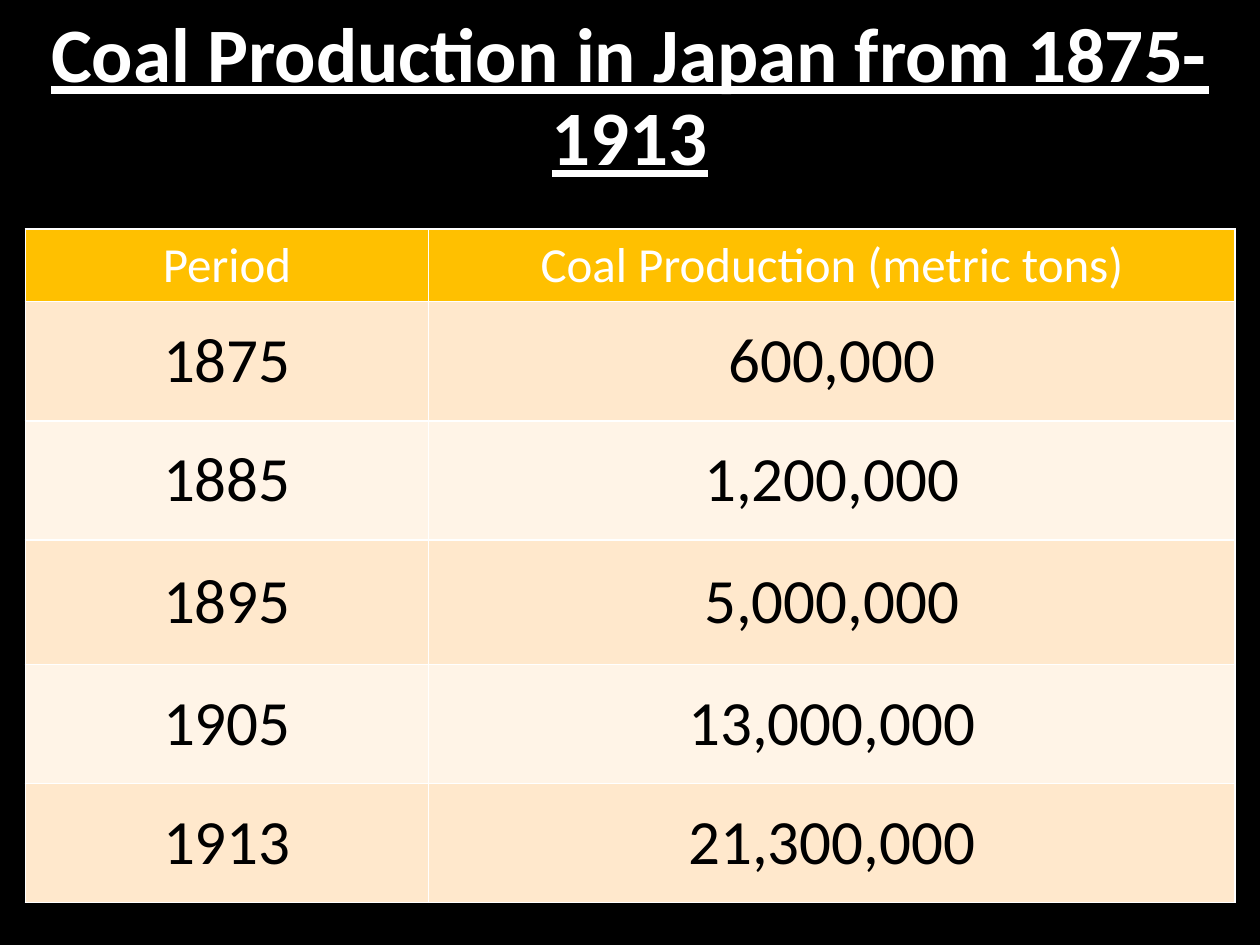
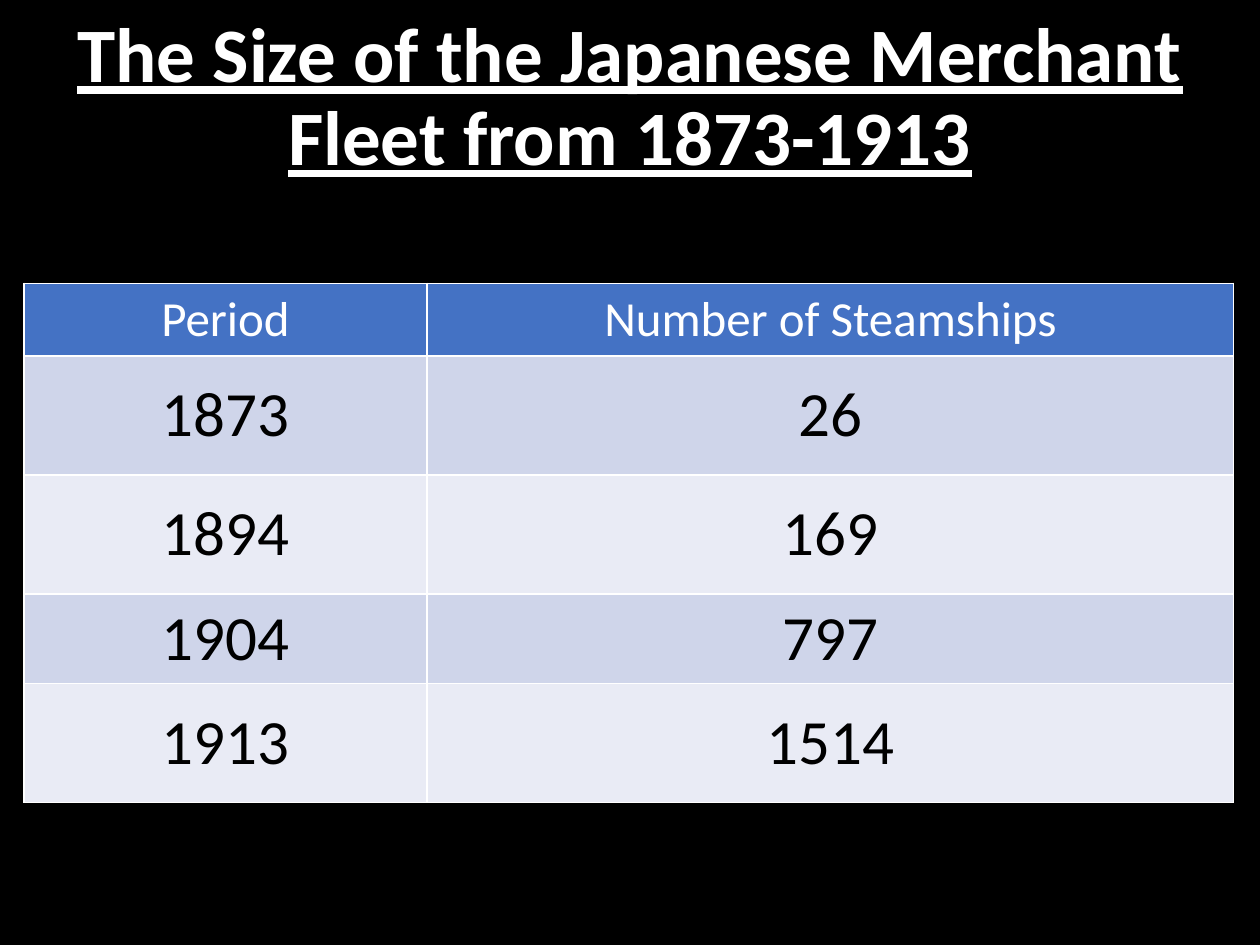
from lxml import etree
from pptx import Presentation
from pptx import util as u
from pptx.dml.color import RGBColor
from pptx.enum import text
from pptx.oxml import ns

FONT = "Calibri"
WHITE, BLACK = "FFFFFF", "000000"
COLUMN_WIDTHS = (8.13, 16.26)
HEADER_HEIGHT, ROW_HEIGHT = 1.45, 2.4

SLIDES = [
    {
        "title": "Coal Production in Japan from 1875-1913",
        "header": ("Period", "Coal Production (metric tons)"),
        "rows": [
            ("1875", "600,000"),
            ("1885", "1,200,000"),
            ("1895", "5,000,000"),
            ("1905", "13,000,000"),
            ("1913", "21,300,000"),
        ],
        "corner": (0.51, 4.62),
        "special_heights": {"1895": 2.51},
        "header_fill": "FFC000",
        "bands": ("FFE8CC", "FFF4E7"),
    },
    {
        "title": "The Size of the Japanese Merchant Fleet from 1873-1913",
        "header": ("Period", "Number of Steamships"),
        "rows": [
            ("1873", "26"),
            ("1894", "169"),
            ("1904", "797"),
            ("1913", "1514"),
        ],
        "corner": (0.48, 5.71),
        "special_heights": {"1904": 1.81},
        "header_fill": "4472C4",
        "bands": ("CFD5EA", "E9EBF5"),
    },
]


def paint(fill, color):
    fill.solid()
    fill.fore_color.rgb = RGBColor.from_string(color)


def write(frame, words, size, color, bold=False, underline=False, spacing=1.0):
    para = frame.paragraphs[0]
    para.alignment = text.PP_ALIGN.CENTER
    para.line_spacing = spacing
    span = para.add_run()
    span.text = words
    font = span.font
    font.name, font.size = FONT, u.Pt(size)
    font.bold, font.underline = bold, underline
    paint(font.fill, color)


def add_borders(cell, color=WHITE, width=1):
    properties = cell._tc.get_or_add_tcPr()
    for side in ("a:lnL", "a:lnR", "a:lnT", "a:lnB"):
        line = etree.SubElement(properties, ns.qn(side), w=str(u.Pt(width)))
        solid = etree.SubElement(line, ns.qn("a:solidFill"))
        etree.SubElement(solid, ns.qn("a:srgbClr"), val=color)


def add_title(page, words):
    title = page.shapes.title
    title.left, title.top = u.Cm(0), u.Cm(0)
    title.width, title.height = u.Cm(25.4), u.Cm(3.99)
    frame = title.text_frame
    frame.word_wrap = True
    frame.auto_size = text.MSO_AUTO_SIZE.NONE
    frame.vertical_anchor = text.MSO_ANCHOR.MIDDLE
    write(frame, words, 44, WHITE, bold=True, underline=True, spacing=0.9)


def add_data_table(page, content):
    rows = [content["header"], *content["rows"]]
    heights = [HEADER_HEIGHT] + [
        content["special_heights"].get(period, ROW_HEIGHT)
        for period, _ in content["rows"]
    ]
    lengths = (*content["corner"], sum(COLUMN_WIDTHS), sum(heights))
    table = page.shapes.add_table(
        len(rows), len(COLUMN_WIDTHS), *map(u.Cm, lengths)
    ).table
    table.first_row = table.horz_banding = False
    for column, width in zip(table.columns, COLUMN_WIDTHS):
        column.width = u.Cm(width)
    for index, (values, height) in enumerate(zip(rows, heights)):
        table.rows[index].height = u.Cm(height)
        if index == 0:
            fill, size, color = content["header_fill"], 28, WHITE
        else:
            fill, size, color = content["bands"][(index - 1) % 2], 36, BLACK
        for cell, value in zip(table.rows[index].cells, values):
            add_borders(cell)
            paint(cell.fill, fill)
            cell.vertical_anchor = text.MSO_ANCHOR.MIDDLE
            write(cell.text_frame, value, size, color)


def main():
    deck = Presentation()
    deck.slide_width, deck.slide_height = u.Cm(25.4), u.Cm(19.05)
    paint(deck.slide_master.background.fill, BLACK)
    title_only = deck.slide_layouts.get_by_name("Title Only")
    for content in SLIDES:
        page = deck.slides.add_slide(title_only)
        add_title(page, content["title"])
        add_data_table(page, content)
    deck.save("out.pptx")


if __name__ == "__main__":
    main()
